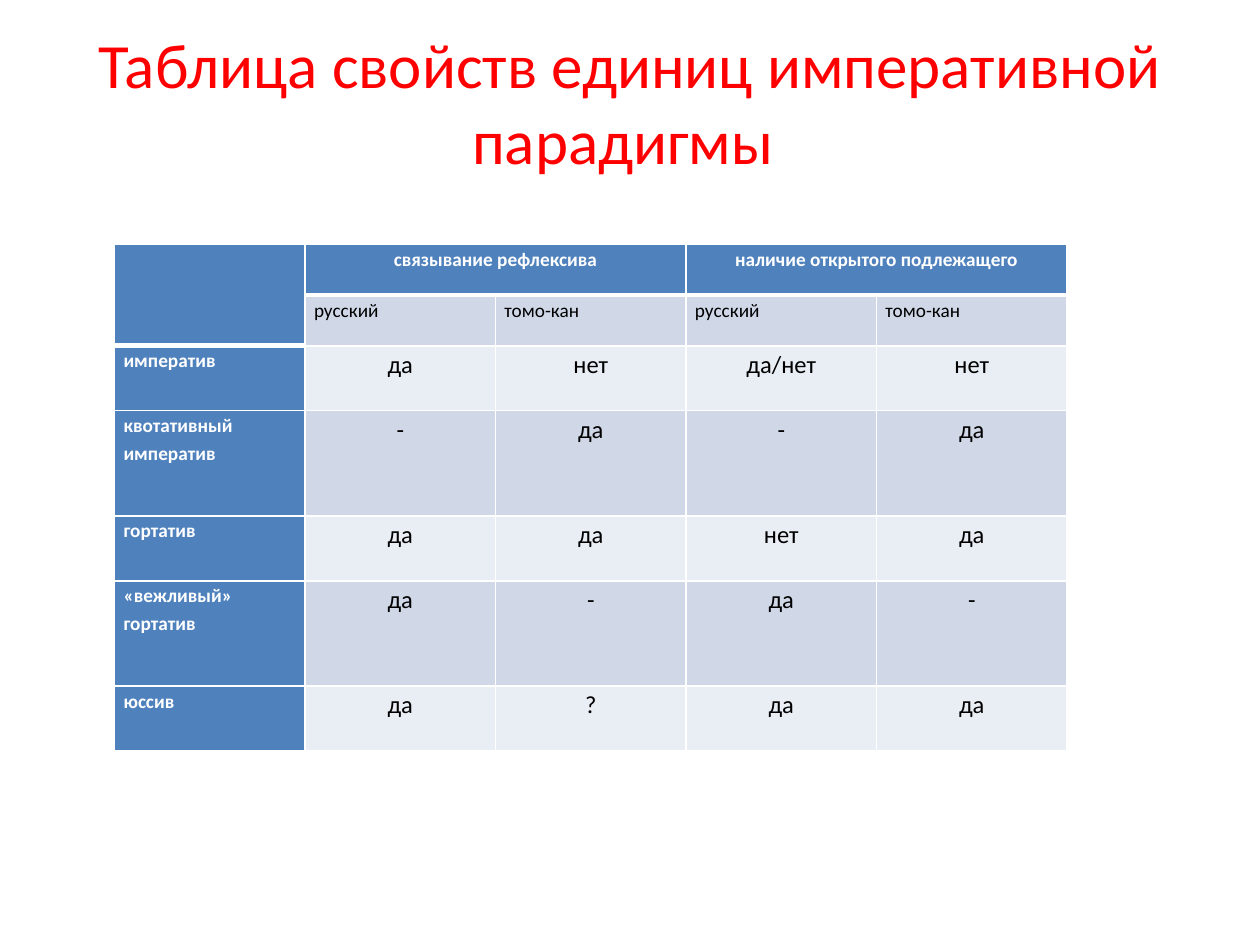
from lxml import etree
from pptx import Presentation, util as u
from pptx.dml.color import RGBColor
from pptx.enum import text
from pptx.oxml import ns

COLORS = {"title": "FF0000", "head": "4F81BD", "dark": "D0D8E8",
          "light": "E9EDF4", "white": "FFFFFF", "black": "000000"}
ROWS = [
    ["", "связывание рефлексива", "", "наличие открытого подлежащего", ""],
    ["", "русский", "томо-кан", "русский", "томо-кан"],
    ["императив", "да", "нет", "да/нет", "нет"],
    ["квотативный императив", "-", "да", "-", "да"],
    ["гортатив", "да", "да", "нет", "да"],
    ["«вежливый» гортатив", "да", "-", "да", "-"],
    ["юссив", "да", "?", "да", "да"],
]
HEIGHTS = [1.02, 1.02, 1.31, 2.12, 1.31, 2.12, 1.31]
COLUMN_WIDTH = 3.84


def add_span(para, words, size, color, bold=False):
    span = para.add_run()
    span.text = words
    span.font.name = "Calibri"
    span.font.size = u.Pt(size)
    span.font.bold = bold
    span.font.color.rgb = RGBColor.from_string(COLORS[color])


def add_border(cell, side, points):
    line = etree.SubElement(cell._tc.get_or_add_tcPr(), ns.qn(f"a:ln{side}"),
                            w=str(u.Pt(points)))
    fill = etree.SubElement(line, ns.qn("a:solidFill"))
    etree.SubElement(fill, ns.qn("a:srgbClr"), val=COLORS["white"])


deck = Presentation()
deck.slide_width, deck.slide_height = u.Cm(25.4), u.Cm(19.05)
page = deck.slides.add_slide(deck.slide_layouts[6])

box = page.shapes.add_textbox(u.Cm(1.27), u.Cm(0.76), u.Cm(22.86), u.Cm(2.57))
box.text_frame.word_wrap = True
box.text_frame.vertical_anchor = text.MSO_ANCHOR.MIDDLE
para = box.text_frame.paragraphs[0]
para.alignment = text.PP_ALIGN.CENTER
add_span(para, "Таблица свойств единиц императивной парадигмы ", 36, "title")

table = page.shapes.add_table(
    len(ROWS), len(ROWS[0]), u.Cm(2.31), u.Cm(4.93),
    u.Cm(COLUMN_WIDTH * len(ROWS[0])), u.Cm(sum(HEIGHTS))).table
for column in table.columns:
    column.width = u.Cm(COLUMN_WIDTH)
for row, height in zip(table.rows, HEIGHTS):
    row.height = u.Cm(height)

for r, words_in_row in enumerate(ROWS):
    for c, words in enumerate(words_in_row):
        cell = table.cell(r, c)
        header = r == 0 or c == 0
        body = r > 1 and c > 0
        last_header_row = 1 if c == 0 else 0
        for side in "LRTB":
            thick = (side == "B" and r <= last_header_row
                     or side == "T" and r == last_header_row + 1)
            add_border(cell, side, 3 if thick else 1)
        cell.fill.solid()
        shade = "head" if header else "dark" if r % 2 else "light"
        cell.fill.fore_color.rgb = RGBColor.from_string(COLORS[shade])
        cell.margin_left = cell.margin_right = u.Cm(0.18)
        cell.margin_top = cell.margin_bottom = 0
        if words:
            para = cell.text_frame.paragraphs[0]
            para.line_spacing = 1.15
            para.space_after = u.Pt(10)
            if r == 0 or body:
                para.alignment = text.PP_ALIGN.CENTER
            add_span(para, words, 14 if body else 11,
                     "white" if header else "black", header)

for first, last in [((0, 0), (1, 0)), ((0, 1), (0, 2)), ((0, 3), (0, 4))]:
    table.cell(*first).merge(table.cell(*last))

deck.save("out.pptx")
